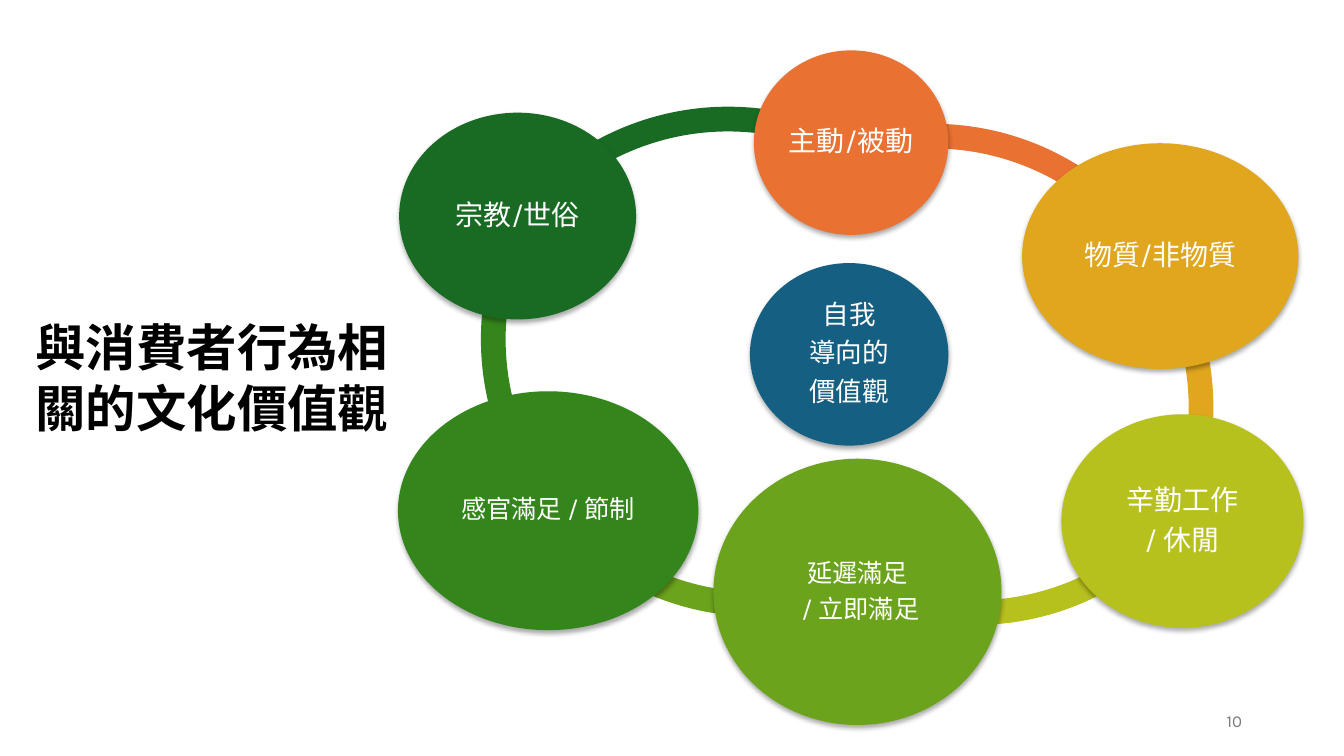
from dataclasses import dataclass

from lxml import etree
from pptx import Presentation
from pptx.dml.color import RGBColor
from pptx.enum.shapes import MSO_SHAPE
from pptx.enum.text import MSO_ANCHOR, MSO_AUTO_SIZE, PP_ALIGN
from pptx.oxml.ns import qn
from pptx.shapes.autoshape import Shape
from pptx.slide import Slide
from pptx.text.text import _Paragraph
from pptx.util import Cm, Pt

ELLIPSE = MSO_SHAPE.OVAL
BLOCK_ARC = MSO_SHAPE.BLOCK_ARC
MIDDLE = MSO_ANCHOR.MIDDLE
TOP = MSO_ANCHOR.TOP
CENTER = PP_ALIGN.CENTER
LEFT = PP_ALIGN.LEFT
RIGHT = PP_ALIGN.RIGHT
FIT_SHAPE = MSO_AUTO_SIZE.SHAPE_TO_FIT_TEXT

FONT = "Karla"
ARC_SIZE = 13.84
ARC_THICKNESS = 0.045
TEXT_INSET = 0.08
COLORS = {
    "black": "000000",
    "white": "FFFFFF",
    "gray": "797979",
    "blue": "156082",
    "orange": "E97132",
    "amber": "E0A61D",
    "lime": "B7C11E",
    "leaf": "6BA31D",
    "green": "34861C",
    "forest": "196B24",
}


@dataclass(frozen=True)
class RingArc:
    color: str
    left: float
    top: float
    start: float
    end: float


@dataclass(frozen=True)
class ValueCircle:
    color: str
    left: float
    top: float
    width: float
    height: float
    font_size: int
    lines: tuple[str, ...]


RING_ARCS = (
    RingArc("forest", 11.43, 2.69, 130.87, 178.39),
    RingArc("green", 12.12, 1.63, 84.27, 124.44),
    RingArc("leaf", 12.17, 1.70, 40.85, 84.75),
    RingArc("lime", 17.65, 1.91, 23.76, 69.54),
    RingArc("amber", 16.74, 3.35, 195.24, 14.91),
    RingArc("orange", 16.59, 3.12, 151.48, 196.65),
)

VALUE_CIRCLES = (
    ValueCircle("blue", 18.9, 6.63, 5.0, 4.6, 19, ("自我", "導向的", "價值觀")),
    ValueCircle("orange", 19.0, 1.27, 4.9, 4.65, 20, ("主動/被動",)),
    ValueCircle("amber", 25.76, 3.61, 6.96, 5.69, 20, ("物質/非物質",)),
    ValueCircle("lime", 26.75, 10.44, 6.1, 5.38, 20, ("辛勤工作", "/ 休閒")),
    ValueCircle("leaf", 17.98, 11.56, 7.26, 6.71, 18, ("延遲滿足", " / 立即滿足")),
    ValueCircle("green", 10.03, 9.86, 7.57, 6.02, 18, ("感官滿足 / 節制",)),
    ValueCircle("forest", 10.06, 2.84, 5.97, 5.21, 20, ("宗教/世俗",)),
)


def rgb(name: str) -> RGBColor:
    return RGBColor.from_string(COLORS[name])


def add_run(paragraph: _Paragraph, text: str, size: int, color: str, bold: bool = False) -> None:
    run = paragraph.add_run()
    run.text = text
    run.font.name = FONT
    run.font.size = Pt(size)
    run.font.bold = bold
    run.font.color.rgb = rgb(color)


def paint(shape: Shape, color: str) -> None:
    shape.shadow.inherit = False
    shape.fill.solid()
    shape.fill.fore_color.rgb = rgb(color)
    shape.line.fill.background()


def add_soft_shadow(shape: Shape) -> None:
    effects = shape._element.spPr.find(qn("a:effectLst"))
    shadow = etree.SubElement(effects, qn("a:outerShdw"))
    shadow.set("blurRad", str(Pt(3.5)))
    shadow.set("dist", str(Pt(2.2)))
    shadow.set("dir", "5400000")
    shadow.set("algn", "ctr")
    shadow.set("rotWithShape", "0")
    shadow_color = etree.SubElement(shadow, qn("a:srgbClr"), val=COLORS["black"])
    etree.SubElement(shadow_color, qn("a:alpha"), val="32000")


def add_title(slide: Slide) -> None:
    title = slide.shapes.title
    title.left, title.top, title.width, title.height = Cm(0.64), Cm(7.85), Cm(10.34), Cm(3.33)
    frame = title.text_frame
    frame.word_wrap = True
    frame.auto_size = FIT_SHAPE
    frame.vertical_anchor = TOP
    paragraph = frame.paragraphs[0]
    paragraph.alignment = LEFT
    add_run(paragraph, "與消費者行為相關的文化價值觀", 36, "black", bold=True)


def add_ring_arc(slide: Slide, arc: RingArc) -> None:
    shape = slide.shapes.add_shape(
        BLOCK_ARC, Cm(arc.left), Cm(arc.top), Cm(ARC_SIZE), Cm(ARC_SIZE)
    )
    for index, value in enumerate((arc.start, arc.end, ARC_THICKNESS)):
        shape.adjustments[index] = value
    paint(shape, arc.color)


def add_value_circle(slide: Slide, circle: ValueCircle) -> None:
    shape = slide.shapes.add_shape(
        ELLIPSE, Cm(circle.left), Cm(circle.top), Cm(circle.width), Cm(circle.height)
    )
    paint(shape, circle.color)
    add_soft_shadow(shape)
    frame = shape.text_frame
    frame.word_wrap = True
    frame.vertical_anchor = MIDDLE
    frame.margin_left = frame.margin_right = Cm(TEXT_INSET)
    frame.margin_top = frame.margin_bottom = Cm(TEXT_INSET)
    for index, line in enumerate(circle.lines):
        paragraph = frame.add_paragraph() if index else frame.paragraphs[0]
        paragraph.alignment = CENTER
        paragraph.line_spacing = 0.9
        paragraph.space_after = Pt(circle.font_size * 0.35)
        add_run(paragraph, line, circle.font_size, "white")


def add_page_number(slide: Slide) -> None:
    box = slide.shapes.add_textbox(Cm(23.93), Cm(17.65), Cm(7.62), Cm(1.02))
    frame = box.text_frame
    frame.word_wrap = True
    frame.vertical_anchor = MIDDLE
    paragraph = frame.paragraphs[0]
    paragraph.alignment = RIGHT
    add_run(paragraph, "10", 12, "gray")


def main() -> None:
    presentation = Presentation()
    presentation.slide_width = Cm(33.87)
    presentation.slide_height = Cm(19.05)
    slide = presentation.slides.add_slide(presentation.slide_layouts[5])
    add_title(slide)
    for arc in RING_ARCS:
        add_ring_arc(slide, arc)
    for circle in VALUE_CIRCLES:
        add_value_circle(slide, circle)
    add_page_number(slide)
    presentation.save("out.pptx")


if __name__ == "__main__":
    main()
